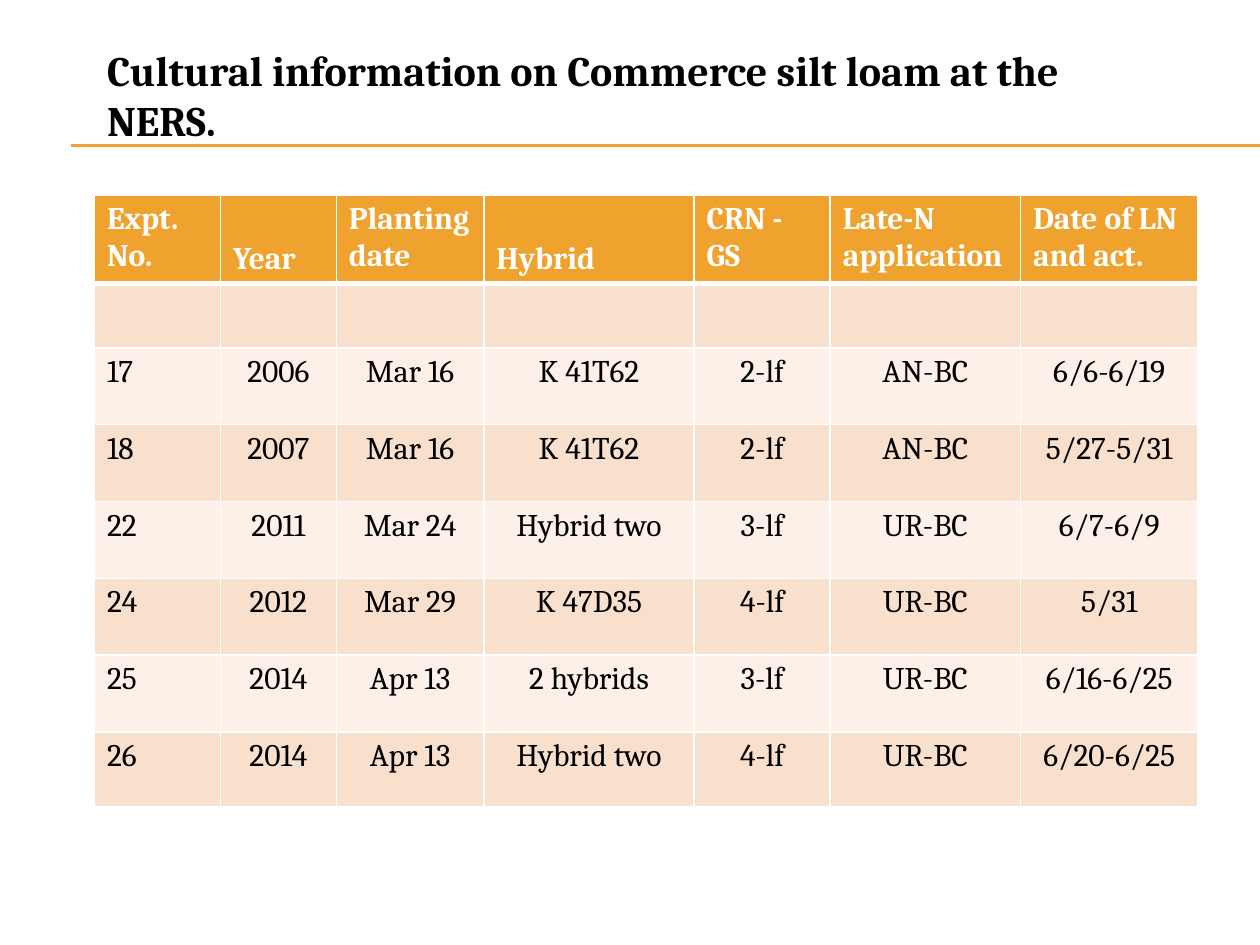
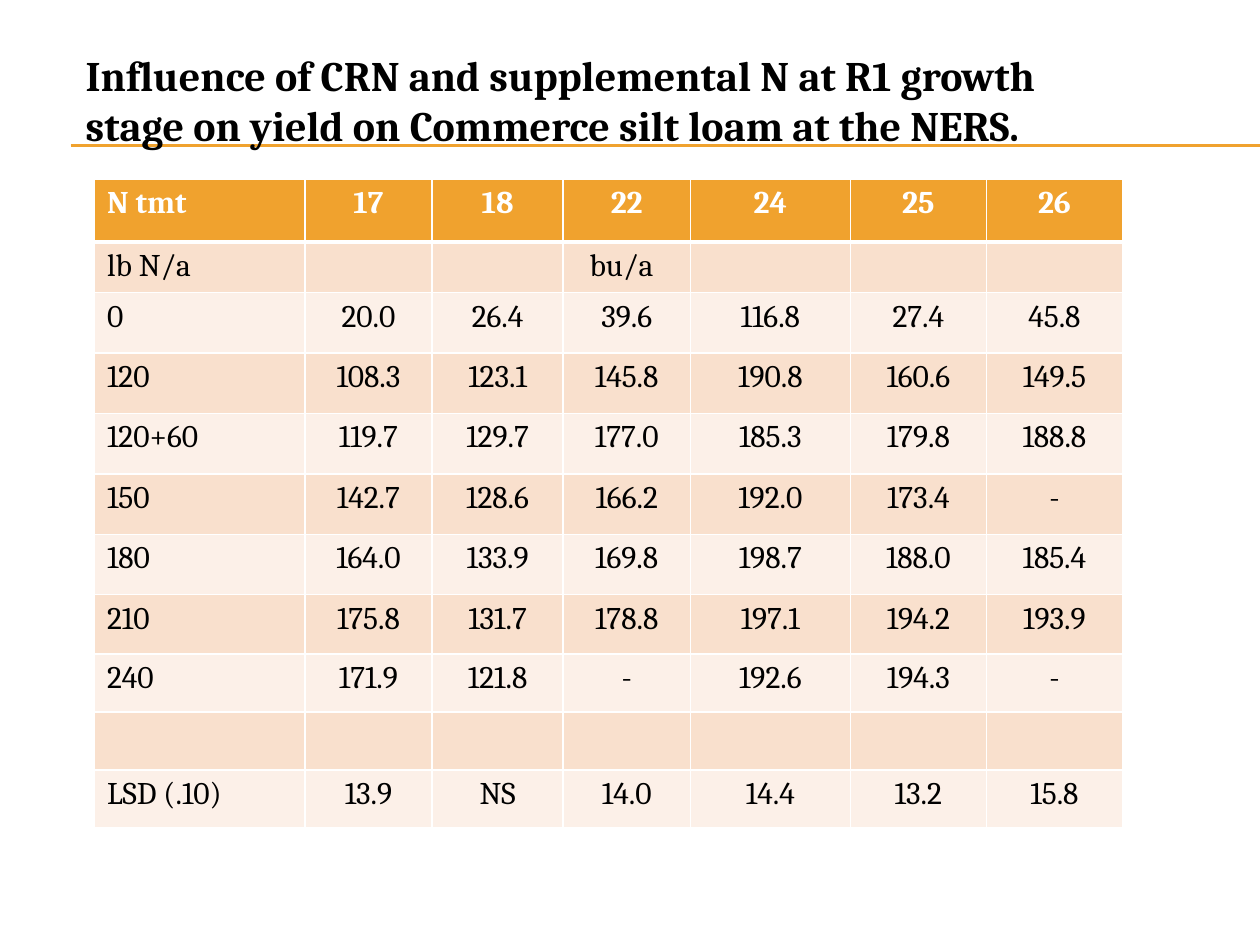
"""Build two slides of nitrogen trial tables in one shared style."""
import dataclasses

import lxml.etree
import pptx
import pptx.dml.color
import pptx.enum.shapes
import pptx.enum.text
import pptx.oxml.ns
import pptx.util

Inches = pptx.util.Inches
Pt = pptx.util.Pt
RGB = pptx.dml.color.RGBColor.from_string
PP_ALIGN = pptx.enum.text.PP_ALIGN
MSO_ANCHOR = pptx.enum.text.MSO_ANCHOR
qn = pptx.oxml.ns.qn


@dataclasses.dataclass(frozen=True)
class Theme:
    font: str = "Cambria"
    title_size: int = 24
    table_size: int = 18
    ink: str = "000000"
    paper: str = "FFFFFF"
    accent: str = "F0A22E"
    bands: tuple = ("F9E0CD", "FCF0E8")
    rule_width: float = 0.75
    border: int = 1
    header_border: int = 3


class Deck:
    def __init__(self, theme):
        self.theme = theme
        self.prs = pptx.Presentation()
        self.prs.slide_width, self.prs.slide_height = Inches(10), Inches(7.5)
        self.s = None

    def slide(self, title, left, top):
        self.s = self.prs.slides.add_slide(self.prs.slide_layouts[5])
        for y in (1.15, 1.16):
            self.rule(0.56, y, 10)
        self.title(title, left, top)

    def rule(self, left, y, right):
        line = self.s.shapes.add_connector(
            pptx.enum.shapes.MSO_CONNECTOR.STRAIGHT,
            Inches(left), Inches(y), Inches(right), Inches(y))
        line.line.color.rgb = RGB(self.theme.accent)
        line.line.width = Pt(self.theme.rule_width)
        lxml.etree.SubElement(line.element.spPr, qn("a:effectLst"))

    def title(self, text, left, top):
        sp = self.s.shapes.title
        sp.element.getparent().append(sp.element)
        sp.left, sp.top = Inches(left), Inches(top)
        sp.width, sp.height = Inches(8.5), Inches(0.91)
        tf = sp.text_frame
        tf.text = text
        tf.word_wrap = True
        tf.auto_size = pptx.enum.text.MSO_AUTO_SIZE.SHAPE_TO_FIT_TEXT
        tf.vertical_anchor = MSO_ANCHOR.TOP
        self.format(tf, self.theme.title_size, self.theme.ink, True, PP_ALIGN.LEFT)

    def format(self, tf, size, color, bold, align):
        for p in tf.paragraphs:
            p.alignment = align
            for r in p.runs:
                r.font.name = self.theme.font
                r.font.size = Pt(size)
                r.font.bold = bold
                r.font.color.rgb = RGB(color)

    def table(self, left, top, widths, heights, rows, header_align):
        frame = self.s.shapes.add_table(
            len(rows), len(widths), Inches(left), Inches(top),
            Inches(sum(widths)), Inches(sum(heights)))
        tbl = frame.table
        for col, width in zip(tbl.columns, widths):
            col.width = Inches(width)
        for row, height in zip(tbl.rows, heights):
            row.height = Inches(height)
        for i, row in enumerate(rows):
            for j, text in enumerate(row):
                align = header_align if i == 0 else PP_ALIGN.CENTER
                self.cell(tbl.cell(i, j), text, i, align if j else PP_ALIGN.LEFT)
        return tbl

    def cell(self, cell, text, row, align):
        t = self.theme
        header = row == 0
        cell.fill.solid()
        cell.fill.fore_color.rgb = RGB(t.accent if header else t.bands[(row - 1) % 2])
        cell.text_frame.text = text
        self.format(cell.text_frame, t.table_size, t.paper if header else t.ink, header, align)
        top = t.header_border if row == 1 else t.border
        bottom = t.header_border if header else t.border
        self.borders(cell, {"L": t.border, "R": t.border, "T": top, "B": bottom})

    def borders(self, cell, widths):
        tcPr = cell._tc.get_or_add_tcPr()
        for i, (side, width) in enumerate(widths.items()):
            ln = lxml.etree.Element(qn(f"a:ln{side}"), w=str(Pt(width)))
            fill = lxml.etree.SubElement(ln, qn("a:solidFill"))
            lxml.etree.SubElement(fill, qn("a:srgbClr"), val=self.theme.paper)
            tcPr.insert(i, ln)


CULTURE = [
    ["Expt. No.", "Year", "Planting date", "Hybrid", "CRN - GS",
     "Late-N\napplication", "Date of LN and act."],
    [""] * 7,
    ["17", "2006", "Mar 16", "K 41T62", "2-lf", "AN-BC", "6/6-6/19"],
    ["18", "2007", "Mar 16", "K 41T62", "2-lf", "AN-BC", "5/27-5/31"],
    ["22", "2011", "Mar 24", "Hybrid two", "3-lf", "UR-BC", "6/7-6/9"],
    ["24", "2012", "Mar 29", "K 47D35", "4-lf", "UR-BC", "5/31"],
    ["25", "2014", "Apr 13", "2 hybrids", "3-lf", "UR-BC", "6/16-6/25"],
    ["26", "2014", "Apr 13", "Hybrid two", "4-lf", "UR-BC", "6/20-6/25"],
]

YIELDS = [
    ["N tmt", "17", "18", "22", "24", "25", "26"],
    ["lb N/a", "", "", "bu/a", "", "", ""],
    ["0", "20.0", "26.4", "39.6", "116.8", "27.4", "45.8"],
    ["120", "108.3", "123.1", "145.8", "190.8", "160.6", "149.5"],
    ["120+60", "119.7", "129.7", "177.0", "185.3", "179.8", "188.8"],
    ["150", "142.7", "128.6", "166.2", "192.0", "173.4", "-"],
    ["180", "164.0", "133.9", "169.8", "198.7", "188.0", "185.4"],
    ["210", "175.8", "131.7", "178.8", "197.1", "194.2", "193.9"],
    ["240", "171.9", "121.8", "-", "192.6", "194.3", "-"],
    [""] * 7,
    ["LSD (.10)", "13.9", "NS", "14.0", "14.4", "13.2", "15.8"],
]


def main():
    deck = Deck(Theme())

    deck.slide("Cultural information on Commerce silt loam at the NERS.", 0.75, 0.3)
    culture = deck.table(
        0.75, 1.55, [1, 0.92, 1.17, 1.67, 1.08, 1.51, 1.41],
        [0.7, 0.51] + [0.61] * 5 + [0.59], CULTURE, PP_ALIGN.LEFT)
    for column in (CULTURE[0].index("Year"), CULTURE[0].index("Hybrid")):
        culture.cell(0, column).vertical_anchor = MSO_ANCHOR.BOTTOM

    deck.slide("Influence of CRN and supplemental N at R1 growth stage on yield "
               "on Commerce silt loam at the NERS.", 0.58, 0.34)
    yields = deck.table(
        0.75, 1.42, [1.67, 1.01, 1.04, 1.01, 1.27, 1.08, 1.08],
        [0.5, 0.37] + [0.48] * 5 + [0.47] + [0.46] * 3, YIELDS, PP_ALIGN.CENTER)
    unit = yields.cell(1, YIELDS[1].index("bu/a"))
    unit.margin_left = Inches(0.21)
    unit.text_frame.paragraphs[0].alignment = PP_ALIGN.LEFT

    deck.prs.save("out.pptx")


if __name__ == "__main__":
    main()
